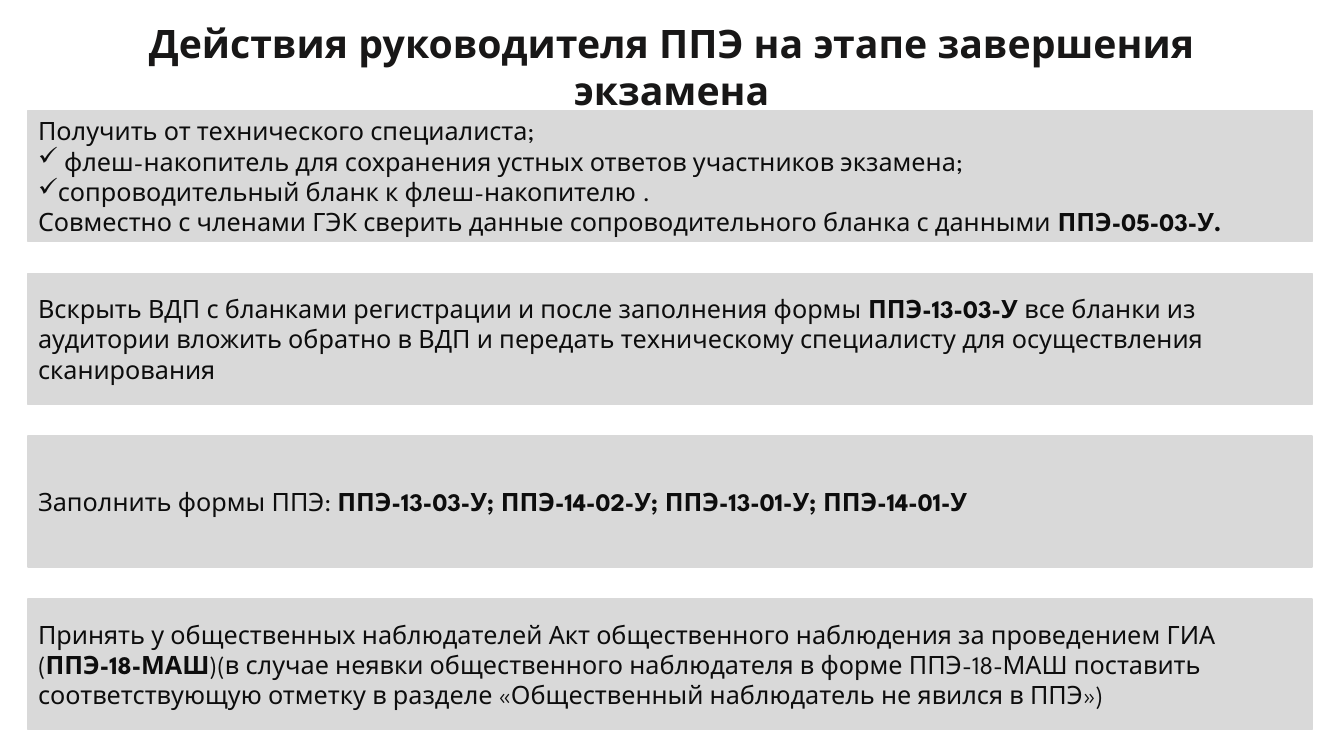
from lxml.etree import SubElement
from pptx import Presentation
from pptx.dml.color import RGBColor
from pptx.enum.shapes import MSO_SHAPE
from pptx.enum.text import MSO_ANCHOR, MSO_AUTO_SIZE, PP_ALIGN
from pptx.oxml.ns import qn
from pptx.util import Cm, Pt

COLORS = {"panel": "D9D9D9", "body": "0D0D0D", "title": "181717"}
FONT = "League Spartan"
CHECK = "✓"

TITLE = "Действия руководителя ППЭ на этапе завершения экзамена"
STEPS = [
    [
        ("", [("Получить от технического специалиста;", False)]),
        (CHECK, [(" флеш-накопитель для сохранения устных ответов участников экзамена;", False)]),
        (CHECK, [("сопроводительный бланк к флеш-накопителю .", False)]),
        ("", [
            ("Совместно с членами ГЭК сверить данные сопроводительного бланка с данными ", False),
            ("ППЭ-05-03-У.", True),
        ]),
    ],
    [
        ("", [
            ("Вскрыть ВДП с бланками регистрации и после заполнения формы ", False),
            ("ППЭ-13-03-У ", True),
            ("все бланки из аудитории вложить обратно в ВДП и передать "
             "техническому специалисту для осуществления сканирования", False),
        ]),
    ],
    [
        ("", [
            ("Заполнить формы ППЭ: ", False),
            ("ППЭ-13-03-У; ППЭ-14-02-У; ППЭ-13-01-У; ППЭ-14-01-У", True),
        ]),
    ],
    [
        ("", [
            ("Принять у общественных наблюдателей Акт общественного наблюдения "
             "за проведением ГИА (", False),
            ("ППЭ-18-МАШ", True),
            (")(в случае неявки общественного наблюдателя в форме ППЭ-18-МАШ "
             "поставить соответствующую отметку в разделе "
             "«Общественный наблюдатель не явился в ППЭ»)", False),
        ]),
    ],
]

PANEL_LEFT, PANEL_TOP = 0.71, 2.79
PANEL_WIDTH, PANEL_HEIGHT = 32.36, 3.3
PANEL_STEP = 4.1


def rgb(name):
    return RGBColor.from_string(COLORS[name])


def apply(target, values):
    for name, value in values.items():
        setattr(target, name, value)


class SlideBuilder:
    def __init__(self, slide):
        self.slide = slide
        self.body = {"name": FONT, "size": Pt(18)}
        self.heading = {"name": FONT, "size": Pt(28)}

    def run(self, p, text, style, color, bold):
        r = p.add_run()
        r.text = text
        apply(r.font, {**style, "bold": bold})
        r.font.color.rgb = rgb(color)

    def bullet(self, p, char):
        pPr = p._p.get_or_add_pPr()
        pPr.set("marL", "0")
        pPr.set("indent", "0")
        SubElement(pPr, qn("a:buChar")).set("char", char)

    def title(self, text, left, top, width, height):
        sp = self.slide.shapes.add_textbox(Cm(left), Cm(top), Cm(width), Cm(height))
        tf = sp.text_frame
        apply(tf, {"word_wrap": True, "auto_size": MSO_AUTO_SIZE.SHAPE_TO_FIT_TEXT})
        p = tf.paragraphs[0]
        p.alignment = PP_ALIGN.CENTER
        self.run(p, text, self.heading, "title", True)

    def panel(self, group, paragraphs, left, top, width, height):
        sp = group.shapes.add_shape(
            MSO_SHAPE.RECTANGLE, Cm(left), Cm(top), Cm(width), Cm(height))
        sp.shadow.inherit = False
        sp.fill.solid()
        sp.fill.fore_color.rgb = rgb("panel")
        sp.line.color.rgb = rgb("panel")
        sp.line.width = Pt(1)
        tf = sp.text_frame
        apply(tf, {"word_wrap": True, "vertical_anchor": MSO_ANCHOR.MIDDLE})
        for i, (char, runs) in enumerate(paragraphs):
            p = tf.add_paragraph() if i else tf.paragraphs[0]
            p.alignment = PP_ALIGN.LEFT
            if char:
                self.bullet(p, char)
            for text, bold in runs:
                self.run(p, text, self.body, "body", bold)

    def panels(self, steps):
        group = self.slide.shapes.add_group_shape()
        for i, paragraphs in enumerate(steps):
            self.panel(group, paragraphs, PANEL_LEFT, PANEL_TOP + i * PANEL_STEP,
                       PANEL_WIDTH, PANEL_HEIGHT)


def main():
    prs = Presentation()
    apply(prs, {"slide_width": Cm(33.87), "slide_height": Cm(19.05)})
    s = SlideBuilder(prs.slides.add_slide(prs.slide_layouts[6]))
    s.panels(STEPS)
    s.title(TITLE, 1.24, 0.36, 31.37, 1.45)
    prs.save("out.pptx")


if __name__ == "__main__":
    main()
